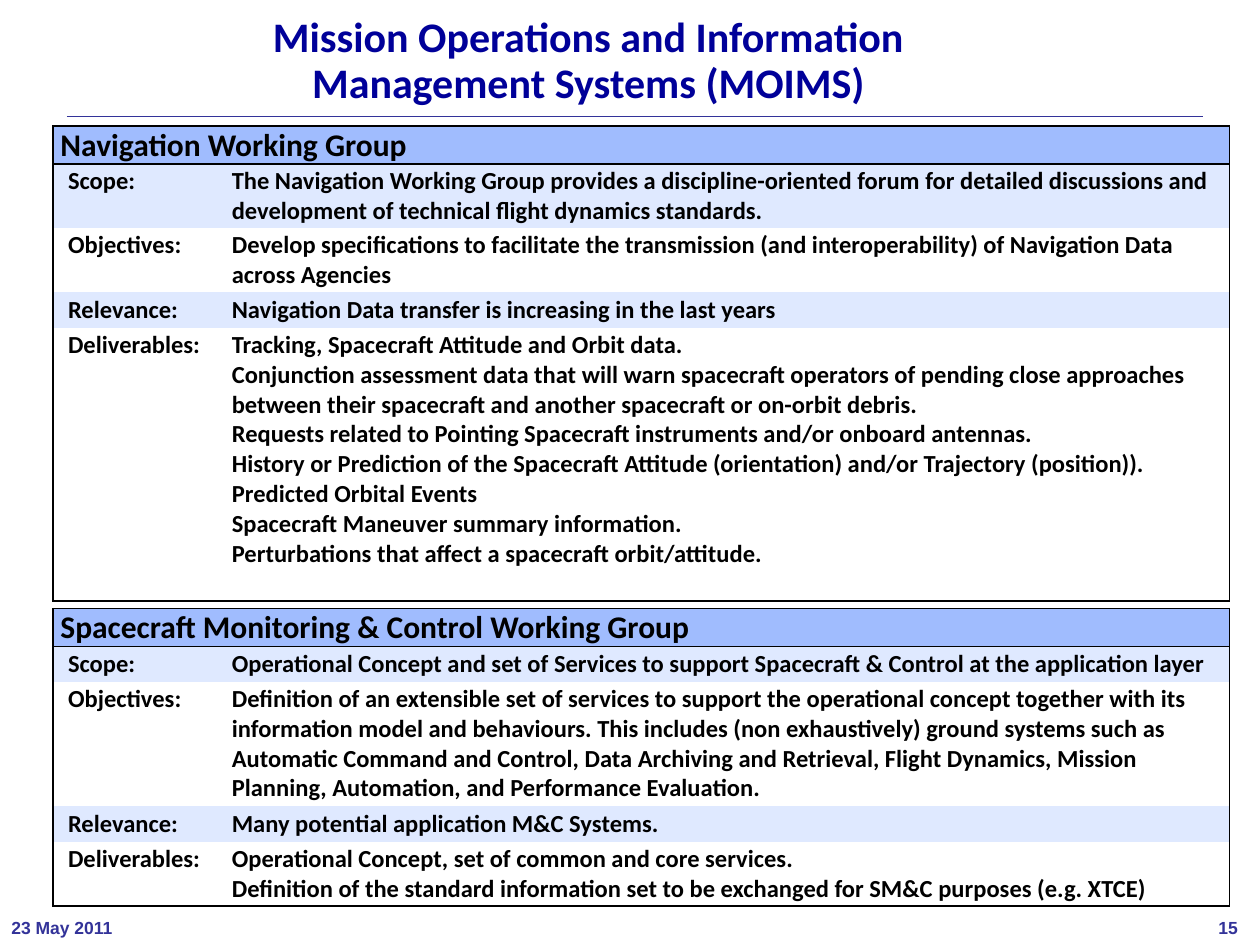
from lxml import etree
from pptx import Presentation
from pptx import util as u
from pptx.dml.color import RGBColor
from pptx.enum import shapes, text
from pptx.oxml.ns import qn

BLACK, WHITE, NAVY, INDIGO = "000000", "FFFFFF", "000099", "333399"
HEADER_FILL, BAND_FILL = "A0BCFE", "DFE9FF"
LABELS = ("Scope:", "Objectives:", "Relevance:", "Deliverables:")
COLUMN_WIDTHS = (1.42, 7.92)

NAVIGATION = (
    ["The Navigation Working Group provides a discipline-oriented forum for detailed "
     "discussions and development of technical flight dynamics standards."],
    ["Develop specifications to facilitate the transmission (and interoperability) of "
     "Navigation Data across Agencies"],
    ["Navigation Data transfer is increasing in the last years"],
    ["Tracking, Spacecraft Attitude and Orbit data.",
     "Conjunction assessment data that will warn spacecraft operators of pending close "
     "approaches between their spacecraft and another spacecraft or on-orbit debris.",
     "Requests related to Pointing Spacecraft instruments and/or onboard antennas.",
     "History or Prediction of the Spacecraft Attitude (orientation) and/or Trajectory "
     "(position)). Predicted Orbital Events",
     "Spacecraft Maneuver summary information.",
     "Perturbations that affect a spacecraft orbit/attitude."],
)
MONITORING = (
    ["Operational Concept and set of Services to support Spacecraft & Control at the "
     "application layer"],
    ["Definition of an extensible set of services to support the operational concept "
     "together with its information model and behaviours. This includes (non exhaustively) "
     "ground systems such as Automatic Command and Control, Data Archiving and Retrieval, "
     "Flight Dynamics, Mission Planning, Automation, and Performance Evaluation."],
    ["Many potential application M&C Systems."],
    ["Operational Concept, set of common and core services.",
     "Definition of the standard information set to be exchanged for SM&C purposes "
     "(e.g. XTCE)"],
)


def color(value):
    return RGBColor.from_string(value)


def set_values(target, values):
    for name, value in values.items():
        setattr(target, name, value)


def write(frame, lines, size, ink, font="Calibri"):
    """Fill a text frame with one paragraph per line."""
    for index, line in enumerate(lines):
        para = frame.add_paragraph() if index else frame.paragraphs[0]
        para.text = line
        set_values(para.font, {"name": font, "size": u.Pt(size), "bold": True})
        para.font.color.rgb = color(ink)


def add_title(page, words):
    title = page.shapes.title
    set_values(title, {"left": u.Inches(1.42), "top": u.Inches(0.08),
                       "width": u.Inches(6.5), "height": u.Inches(0.53)})
    set_values(title.text_frame, {"word_wrap": True, "auto_size": text.MSO_AUTO_SIZE.NONE,
                                  "vertical_anchor": text.MSO_ANCHOR.TOP})
    write(title.text_frame, [words], 24, NAVY)
    set_values(title.text_frame.paragraphs[0],
               {"alignment": text.PP_ALIGN.CENTER, "line_spacing": 0.9})


def add_rule(page):
    start, end, height = u.Inches(0.53), u.Inches(9.55), u.Inches(0.92)
    rule = page.shapes.add_connector(shapes.MSO_CONNECTOR.STRAIGHT, start, height, end, height)
    rule.line.color.rgb = color(INDIGO)
    rule.line.width = u.Pt(0.13)
    etree.SubElement(rule._element.spPr, qn("a:effectLst"))


def add_footer(page, left, width, words):
    box = page.shapes.add_textbox(u.Inches(left), u.Inches(7.24),
                                  u.Inches(width), u.Inches(0.26))
    set_values(box.text_frame, {"word_wrap": False, "margin_left": u.Inches(0.09),
                                "margin_right": u.Inches(0.09),
                                "margin_top": u.Inches(0.04),
                                "margin_bottom": u.Inches(0.04)})
    write(box.text_frame, [words], 10, INDIGO, "Arial")


def set_borders(cell, visible):
    """Draw the named edges (from L, R, T, B) and clear the others."""
    properties = cell._tc.get_or_add_tcPr()
    for edge in "LRTB":
        line = etree.SubElement(properties, qn(f"a:ln{edge}"), w=str(u.Pt(1)))
        if edge in visible:
            fill = etree.SubElement(line, qn("a:solidFill"))
            etree.SubElement(fill, qn("a:srgbClr"), val=BLACK)
        else:
            etree.SubElement(line, qn("a:noFill"))


def format_cell(cell, lines, size, fill, borders, indent=0, padding=0):
    set_borders(cell, borders)
    cell.fill.solid()
    cell.fill.fore_color.rgb = color(fill)
    set_values(cell, {"margin_left": u.Inches(indent), "margin_right": 0,
                      "margin_top": u.Inches(padding), "margin_bottom": u.Inches(padding)})
    write(cell.text_frame, lines, size, BLACK)


def add_group_table(page, top, heights, heading, contents):
    """Add a working group: a merged heading over labelled, banded rows."""
    table = page.shapes.add_table(len(heights), 2, u.Inches(0.42), u.Inches(top),
                                  u.Inches(sum(COLUMN_WIDTHS)),
                                  u.Inches(sum(heights))).table
    set_values(table, {"first_row": False, "horz_banding": False})
    for column, width in zip(table.columns, COLUMN_WIDTHS):
        column.width = u.Inches(width)
    for row, height in zip(table.rows, heights):
        row.height = u.Inches(height)

    # Heading
    table.cell(0, 0).merge(table.cell(0, 1))
    format_cell(table.cell(0, 0), [heading], 18, HEADER_FILL, "LRTB", indent=0.06)
    set_borders(table.cell(0, 1), "RTB")

    # Labelled rows
    for row, (label, lines) in enumerate(zip(LABELS, contents), start=1):
        fill = BAND_FILL if row % 2 else WHITE
        edges = {1: "T", len(LABELS): "B"}.get(row, "")
        format_cell(table.cell(row, 0), [label], 14, fill, "L" + edges, 0.12, 0.02)
        format_cell(table.cell(row, 1), lines, 14, fill, "R" + edges, 0, 0.02)


def main():
    deck = Presentation()
    set_values(deck, {"slide_width": u.Inches(10), "slide_height": u.Inches(7.5)})
    page = deck.slides.add_slide(deck.slide_layouts[5])

    add_rule(page)
    add_footer(page, 9.58, 0.35, "15")
    add_footer(page, 0, 0.99, "23 May 2011")
    add_title(page, "Mission Operations and Information Management Systems (MOIMS)")
    add_group_table(page, 4.83, (0.3, 0.28, 0.99, 0.28, 0.51),
                    "Spacecraft Monitoring & Control Working Group", MONITORING)
    add_group_table(page, 1, (0.3, 0.51, 0.51, 0.28, 2.17),
                    "Navigation Working Group", NAVIGATION)
    deck.save("out.pptx")


if __name__ == "__main__":
    main()
